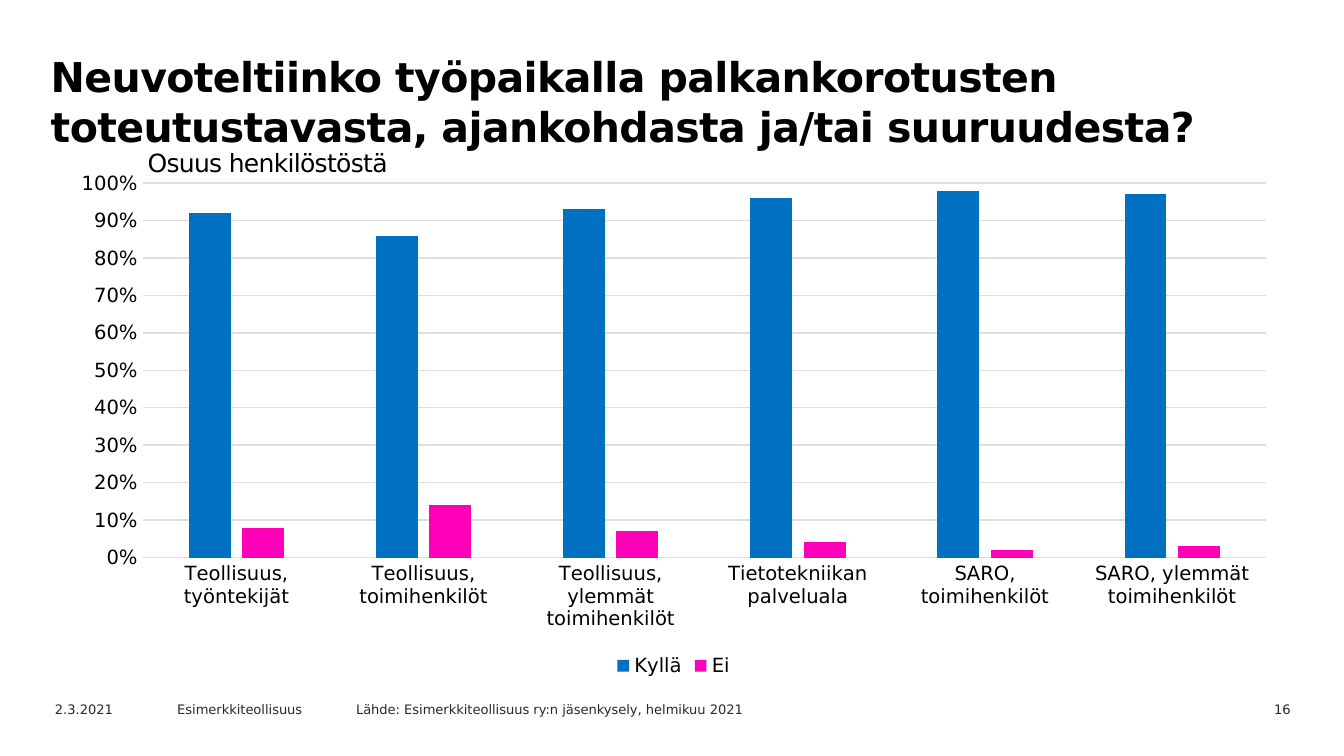
from dataclasses import dataclass

import lxml.etree
import pptx
import pptx.chart.data
import pptx.dml.color
import pptx.enum.chart
import pptx.enum.text
import pptx.oxml
import pptx.oxml.ns
import pptx.util

Cm = pptx.util.Cm
Pt = pptx.util.Pt
RGBColor = pptx.dml.color.RGBColor
Anchor = pptx.enum.text.MSO_ANCHOR
Align = pptx.enum.text.PP_ALIGN

FONT = "DejaVu Sans"
BLACK = RGBColor(0x00, 0x00, 0x00)
INK = RGBColor(0x29, 0x28, 0x2E)
GRID = RGBColor(0xDE, 0xDD, 0xE1)
BLUE = RGBColor(0x00, 0x70, 0xC0)
PINK = RGBColor(0xFF, 0x00, 0xB8)

FOOTER_TOP = 13.13
FOOTER_HEIGHT = 0.46


@dataclass
class Label:
    text: str
    left: float
    top: float
    width: float
    height: float
    size: float = 7
    color: RGBColor = INK
    bold: bool = False
    align: Align = Align.LEFT
    anchor: Anchor = Anchor.TOP
    inset_x: float = 0.25
    inset_y: float = 0.13
    line_pt: float | None = None
    tracking: int = 0


@dataclass
class Answer:
    name: str
    shares: tuple[float, ...]
    color: RGBColor


def footer(text: str, left: float, width: float, align: Align = Align.LEFT) -> Label:
    return Label(text, left, FOOTER_TOP, width, FOOTER_HEIGHT, align=align)


LABELS = [
    Label(
        "Neuvoteltiinko työpaikalla palkankorotusten toteutustavasta, "
        "ajankohdasta ja/tai suuruudesta?",
        0.71, 0.79, 22.81, 1.8, size=22, color=BLACK, bold=True,
        inset_y=0.16, line_pt=27, tracking=-30,
    ),
    footer("2.3.2021", 0.79, 2.54),
    footer("Esimerkkiteollisuus", 3.1, 3.61),
    footer("Lähde: Esimerkkiteollisuus ry:n jäsenkysely, helmikuu 2021", 6.48, 9.02),
    footer("16", 22.25, 2.39, Align.RIGHT),
    Label(
        "Osuus henkilöstöstä", 2.69, 2.67, 5.59, 0.79, size=13.4, color=BLACK,
        anchor=Anchor.MIDDLE, inset_x=0.1, inset_y=0.1, tracking=-40,
    ),
]

GROUPS = [
    "Teollisuus, työntekijät",
    "Teollisuus, toimihenkilöt",
    "Teollisuus, ylemmät toimihenkilöt",
    "Tietotekniikan palveluala",
    "SARO, toimihenkilöt",
    "SARO, ylemmät toimihenkilöt",
]
ANSWERS = [
    Answer("Kyllä", (0.92, 0.86, 0.93, 0.96, 0.98, 0.97), BLUE),
    Answer("Ei", (0.08, 0.14, 0.07, 0.04, 0.02, 0.03), PINK),
]


def set_font(font, size: float, color: RGBColor, bold: bool = False) -> None:
    font.name = FONT
    font.size = Pt(size)
    font.bold = bold
    font.color.rgb = color


def add_label(s, label: Label) -> None:
    sp = s.shapes.add_textbox(
        Cm(label.left), Cm(label.top), Cm(label.width), Cm(label.height)
    )
    tf = sp.text_frame
    tf.word_wrap = True
    tf.vertical_anchor = label.anchor
    tf.margin_left = tf.margin_right = Cm(label.inset_x)
    tf.margin_top = tf.margin_bottom = Cm(label.inset_y)
    tf.text = label.text
    p = tf.paragraphs[0]
    p.alignment = label.align
    if label.line_pt:
        p.line_spacing = Pt(label.line_pt)
    r = p.runs[0]
    set_font(r.font, label.size, label.color, label.bold)
    if label.tracking:
        r.font._element.set("spc", str(label.tracking))


def set_line(line, color: RGBColor) -> None:
    line.color.rgb = color
    line.width = Pt(0.75)


def set_plot_area(chart, x: float, y: float, w: float, h: float) -> None:
    qn = pptx.oxml.ns.qn
    area = chart._chartSpace.find(".//" + qn("c:plotArea"))
    for old in area.findall(qn("c:layout")):
        area.remove(old)
    layout = lxml.etree.Element(qn("c:layout"))
    manual = lxml.etree.SubElement(layout, qn("c:manualLayout"))
    settings = {"layoutTarget": "inner", "xMode": "edge", "yMode": "edge",
                "x": x, "y": y, "w": w, "h": h}
    for tag, value in settings.items():
        lxml.etree.SubElement(manual, qn("c:" + tag)).set("val", str(value))
    area.insert(0, layout)


def add_share_chart(s, groups: list[str], answers: list[Answer]) -> None:
    data = pptx.chart.data.CategoryChartData(number_format="0%")
    data.categories = groups
    for answer in answers:
        data.add_series(answer.name, answer.shares)
    chart = s.shapes.add_chart(
        pptx.enum.chart.XL_CHART_TYPE.COLUMN_CLUSTERED,
        Cm(1.07), Cm(3.07), Cm(23.32), Cm(9.83), data,
    ).chart
    chart.has_title = False
    set_font(chart.font, 10, INK)
    set_plot_area(chart, 0.07, 0.04, 0.91, 0.72)

    plot = chart.plots[0]
    plot.gap_width = 219
    plot.overlap = -27
    plot.vary_by_categories = False
    for series, answer in zip(plot.series, answers):
        series.invert_if_negative = False
        series.format.fill.solid()
        series.format.fill.fore_color.rgb = answer.color

    for axis in (chart.category_axis, chart.value_axis):
        axis.major_tick_mark = pptx.enum.chart.XL_TICK_MARK.NONE
        axis.minor_tick_mark = pptx.enum.chart.XL_TICK_MARK.NONE
        set_font(axis.tick_labels.font, 10.5, BLACK)
    set_line(chart.category_axis.format.line, GRID)

    shares = chart.value_axis
    shares.minimum_scale = 0
    shares.maximum_scale = 1
    shares.major_unit = 0.1
    shares.tick_labels.number_format = "0%"
    shares.tick_labels.number_format_is_linked = False
    shares.format.line.fill.background()
    shares.has_major_gridlines = True
    set_line(shares.major_gridlines.format.line, GRID)

    chart.has_legend = True
    chart.legend.position = pptx.enum.chart.XL_LEGEND_POSITION.BOTTOM
    chart.legend.include_in_layout = False
    set_font(chart.legend.font, 10.5, BLACK)


def main() -> None:
    prs = pptx.Presentation()
    prs.slide_width = Cm(25.4)
    prs.slide_height = Cm(14.29)
    s = prs.slides.add_slide(prs.slide_layouts[6])
    add_share_chart(s, GROUPS, ANSWERS)
    for label in LABELS:
        add_label(s, label)
    prs.save("out.pptx")


if __name__ == "__main__":
    main()
